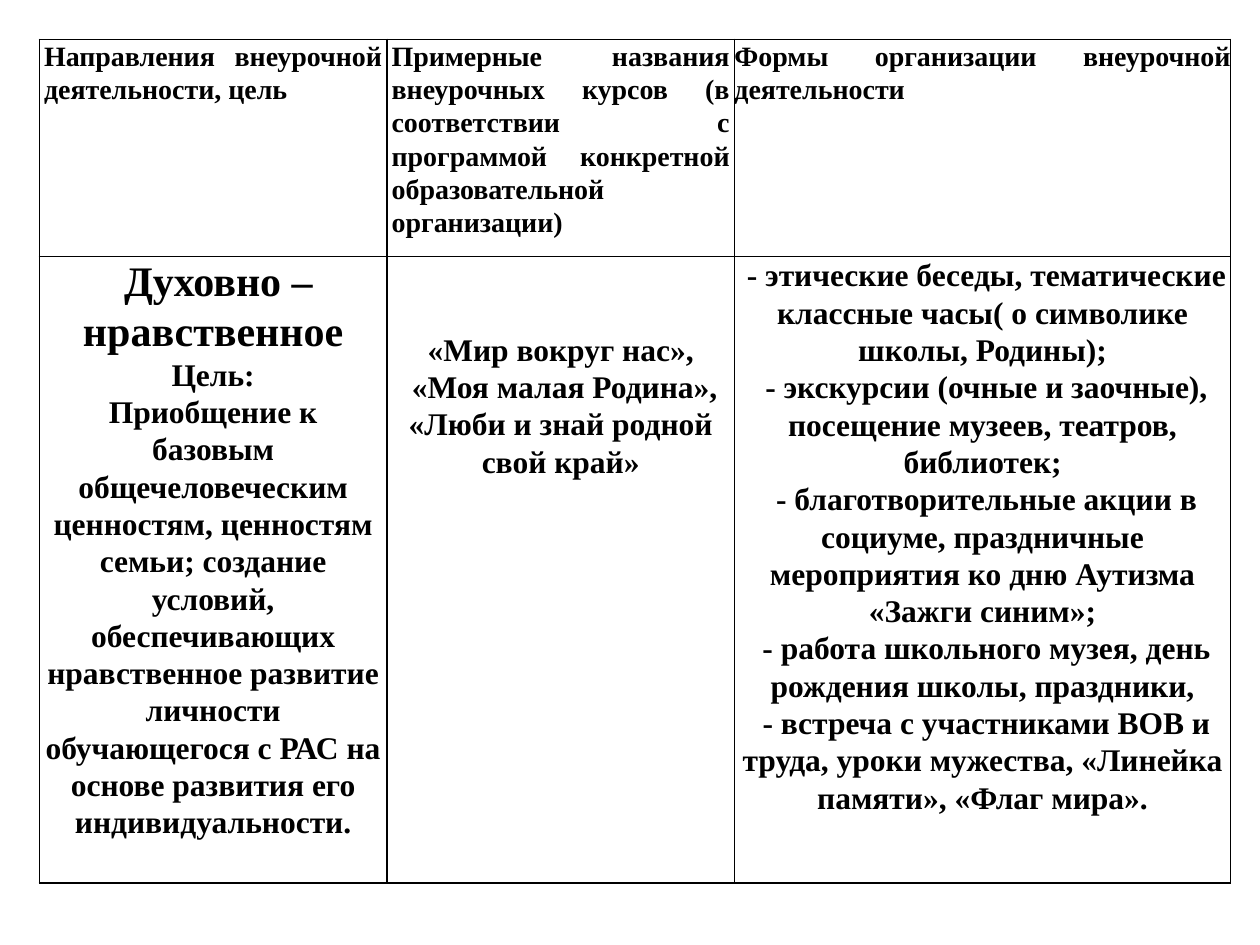
from dataclasses import dataclass

from lxml import etree
from pptx import Presentation
from pptx.dml.color import RGBColor
from pptx.enum import text
from pptx.oxml import ns
from pptx.util import Pt


@dataclass(frozen=True)
class Theme:
    font: str = "Times New Roman"
    ink: RGBColor = RGBColor(0, 0, 0)
    paper: RGBColor = RGBColor(255, 255, 255)
    header: int = 16
    body: int = 18
    direction: int = 24
    line_spacing: float = 1.07
    border: int = 1


THEME = Theme()

COLUMN_WIDTHS = (198.6, 198.6, 283.6)
ROW_HEIGHTS = (124, 358)
SIDE_MARGINS = (2.7, 2.7, 0)
COURSES_TOP = 42.5

HEADERS = (
    "Направления внеурочной деятельности, цель",
    "Примерные названия внеурочных курсов (в соответствии с программой "
    "конкретной образовательной организации)",
    "Формы организации внеурочной деятельности",
)
DIRECTION = (
    " Духовно – нравственное",
    "Цель:",
    "Приобщение к базовым общечеловеческим ценностям, ценностям семьи; "
    "создание условий, обеспечивающих нравственное развитие личности "
    "обучающегося с РАС на основе развития его индивидуальности.",
)
COURSES = (
    "«Мир вокруг нас»,",
    " «Моя малая Родина»,",
    "«Люби и знай родной свой край»",
)
ACTIVITIES = (
    " - этические беседы, тематические классные часы( о символике школы, Родины);",
    " - экскурсии (очные и заочные), посещение музеев, театров, библиотек;",
    " - благотворительные акции в социуме, праздничные мероприятия ко дню "
    "Аутизма «Зажги синим»;",
    " - работа школьного музея, день рождения школы, праздники,",
    " - встреча с участниками ВОВ и труда, уроки мужества, «Линейка памяти», "
    "«Флаг мира».",
)


def add_borders(cell):
    """Outline all four sides; border elements must precede the cell fill."""
    properties = cell._tc.get_or_add_tcPr()
    for position, side in enumerate(("lnL", "lnR", "lnT", "lnB")):
        line = etree.Element(ns.qn(f"a:{side}"), w=str(Pt(THEME.border)))
        fill = etree.SubElement(line, ns.qn("a:solidFill"))
        etree.SubElement(fill, ns.qn("a:srgbClr"), val=str(THEME.ink))
        properties.insert(position, line)


def format_cell(cell, side_margin):
    cell.margin_left = cell.margin_right = Pt(side_margin)
    cell.margin_top = cell.margin_bottom = Pt(0)
    cell.fill.solid()
    cell.fill.fore_color.rgb = THEME.paper
    add_borders(cell)


def write_cell(cell, lines, size, alignment):
    cell.text = "\n".join(lines)
    for paragraph in cell.text_frame.paragraphs:
        paragraph.alignment = alignment
        paragraph.line_spacing = THEME.line_spacing
        font = paragraph.font
        font.name = THEME.font
        font.size = Pt(size)
        font.bold = True
        font.color.rgb = THEME.ink


def add_activity_table(slide):
    table = slide.shapes.add_table(
        len(ROW_HEIGHTS), len(COLUMN_WIDTHS), Pt(22.5), Pt(22.5),
        Pt(sum(COLUMN_WIDTHS)), Pt(sum(ROW_HEIGHTS))).table
    table.first_row = table.horz_banding = False
    for column, width in zip(table.columns, COLUMN_WIDTHS):
        column.width = Pt(width)
    for row, height in zip(table.rows, ROW_HEIGHTS):
        row.height = Pt(height)

    align = text.PP_ALIGN
    bodies = (DIRECTION, COURSES, ACTIVITIES)
    for index, (header, body) in enumerate(zip(HEADERS, bodies)):
        header_cell, body_cell = table.cell(0, index), table.cell(1, index)
        for cell in (header_cell, body_cell):
            format_cell(cell, SIDE_MARGINS[index])
        write_cell(header_cell, [header], THEME.header, align.JUSTIFY)
        write_cell(body_cell, body, THEME.body, align.CENTER)

    direction_name = table.cell(1, 0).text_frame.paragraphs[0]
    direction_name.font.size = Pt(THEME.direction)
    table.cell(1, 1).margin_top = Pt(COURSES_TOP)


def main():
    presentation = Presentation()
    presentation.slide_width, presentation.slide_height = Pt(720), Pt(540)
    blank_layout = presentation.slide_layouts.get_by_name("Blank")
    add_activity_table(presentation.slides.add_slide(blank_layout))
    presentation.save("out.pptx")


if __name__ == "__main__":
    main()
